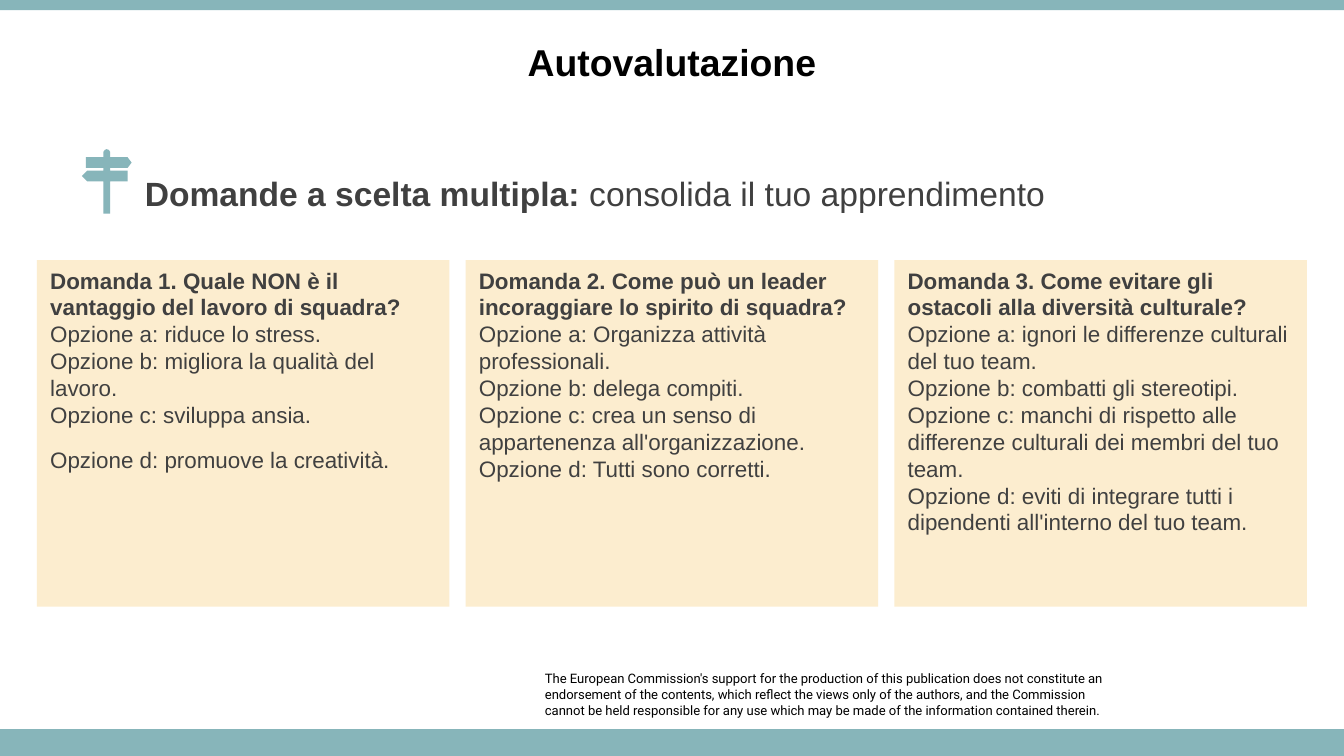
from pptx import Presentation
from pptx.dml.color import RGBColor as Rgb
from pptx.enum.shapes import MSO_SHAPE as Shape
from pptx.enum.text import MSO_ANCHOR as Anchor, PP_ALIGN as Align
from pptx.util import Inches, Pt

HEX = {"teal": "87B5BA", "cream": "FCEDCF", "gray": "404040", "black": "000000"}
COLS, ROWS = 100, 56.25
UNIT = Inches(10) / COLS
SIDES = ("left", "top", "width", "height")
POST = [
    (17, 0.6), (18.5, 0), (20, 0.6), (21, 2), (21, 6), (34, 6), (37, 10),
    (34, 14), (21, 14), (21, 16), (34, 16), (34, 24), (21, 24), (21, 48),
    (16, 48), (16, 24), (4, 24), (0, 20), (4, 16), (16, 16), (16, 14),
    (3, 14), (3, 6), (16, 6), (16, 2),
]
CARDS = [
    ("Domanda 1. Quale NON è il vantaggio del lavoro di squadra?",
     "Opzione a: riduce lo stress.",
     "Opzione b: migliora la qualità del lavoro.",
     "Opzione c: sviluppa ansia.",
     "Opzione d: promuove la creatività."),
    ("Domanda 2. Come può un leader incoraggiare lo spirito di squadra?",
     "Opzione a: Organizza attività professionali.",
     "Opzione b: delega compiti.",
     "Opzione c: crea un senso di appartenenza all'organizzazione.",
     "Opzione d: Tutti sono corretti."),
    ("Domanda 3. Come evitare gli ostacoli alla diversità culturale?",
     "Opzione a: ignori le differenze culturali del tuo team.",
     "Opzione b: combatti gli stereotipi.",
     "Opzione c: manchi di rispetto alle differenze culturali dei membri del tuo team.",
     "Opzione d: eviti di integrare tutti i dipendenti all'interno del tuo team."),
]
NOTE = [
    "The European Commission's support for the production of this publication does not "
    "constitute an endorsement of the contents, which reflect the views only of the "
    "authors, and the Commission",
    "cannot be held responsible for any use which may be made of the information "
    "contained therein.",
]


def grid(box):
    return [round(n * UNIT) for n in box]


def apply(item, form):
    for name, value in form.items():
        setattr(item, name, value)


def paint(shape, tone):
    shape.shadow.inherit = False
    shape.fill.solid()
    shape.fill.fore_color.rgb = Rgb.from_string(HEX[tone])
    shape.line.fill.background()


def block(slide, box, tone):
    shape = slide.shapes.add_shape(Shape.RECTANGLE, *grid(box))
    paint(shape, tone)
    return shape


def write(para, text, size, tone="gray", bold=False, face="Arial"):
    run = para.add_run()
    run.text = text
    apply(run.font, {"size": Pt(size), "bold": bold, "name": face})
    run.font.color.rgb = Rgb.from_string(HEX[tone])


def lines(frame, count):
    for _ in range(count - 1):
        frame.add_paragraph()
    return frame.paragraphs


def title(slide, box):
    shape = slide.shapes.title
    apply(shape, dict(zip(SIDES, grid(box))))
    frame = shape.text_frame
    apply(frame, {"vertical_anchor": Anchor.MIDDLE, "word_wrap": True})
    para = frame.paragraphs[0]
    para.alignment = Align.CENTER
    write(para, "Autovalutazione", 20, "black", True)


def lead(slide, box):
    frame = slide.shapes.add_textbox(*grid(box)).text_frame
    apply(frame, {"vertical_anchor": Anchor.MIDDLE, "word_wrap": True})
    para = frame.paragraphs[0]
    write(para, "Domande a scelta multipla: ", 18, bold=True)
    write(para, "consolida il tuo apprendimento", 18)


def sign(slide, box):
    left, top, width, height = grid(box)
    spots = [(x / 37 * width, y / 48 * height) for x, y in POST]
    pen = slide.shapes.build_freeform(*spots[0])
    pen.add_line_segments(spots[1:], close=True)
    paint(pen.convert_to_shape(left, top), "teal")


def card(slide, box, texts):
    frame = block(slide, box, "cream").text_frame
    apply(frame, {"vertical_anchor": Anchor.TOP, "word_wrap": True})
    paras = lines(frame, len(texts))
    for i, (para, text) in enumerate(zip(paras, texts)):
        apply(para, {"alignment": Align.LEFT, "line_spacing": Pt(14.4)})
        write(para, text, 12, bold=i == 0)
    return paras


def cards(slide, box, gap):
    left, top, width, height = box
    wide = (width - gap * (len(CARDS) - 1)) / len(CARDS)
    rows = [card(slide, (left + i * (wide + gap), top, wide, height), texts)
            for i, texts in enumerate(CARDS)]
    rows[0][-1].space_before = Pt(9.6)


def note(slide, box):
    frame = slide.shapes.add_textbox(*grid(box)).text_frame
    apply(frame, {"word_wrap": True, **{f"margin_{s}": 0 for s in ("left", "top", "right", "bottom")}})
    for para, text in zip(lines(frame, len(NOTE)), NOTE):
        write(para, text, 7, "black", face="Roboto")


def main():
    deck = Presentation()
    apply(deck, {"slide_width": round(COLS * UNIT), "slide_height": round(ROWS * UNIT)})
    slide = deck.slides.add_slide(deck.slide_layouts[5])
    note(slide, (40.55, 49.9, 41.7, 3.5))
    block(slide, (0, ROWS - 2, COLS, 2), "teal")
    block(slide, (0, 0, COLS, 0.75), "teal")
    title(slide, (0, 1.4, COLS, 6.3))
    lead(slide, (9.8, 12.8, 75.6, 3.1))
    sign(slide, (6.1, 11.1, 3.7, 4.8))
    cards(slide, (2.75, 19.35, 94.5, 25.8), 1.2)
    deck.save("out.pptx")


if __name__ == "__main__":
    main()
